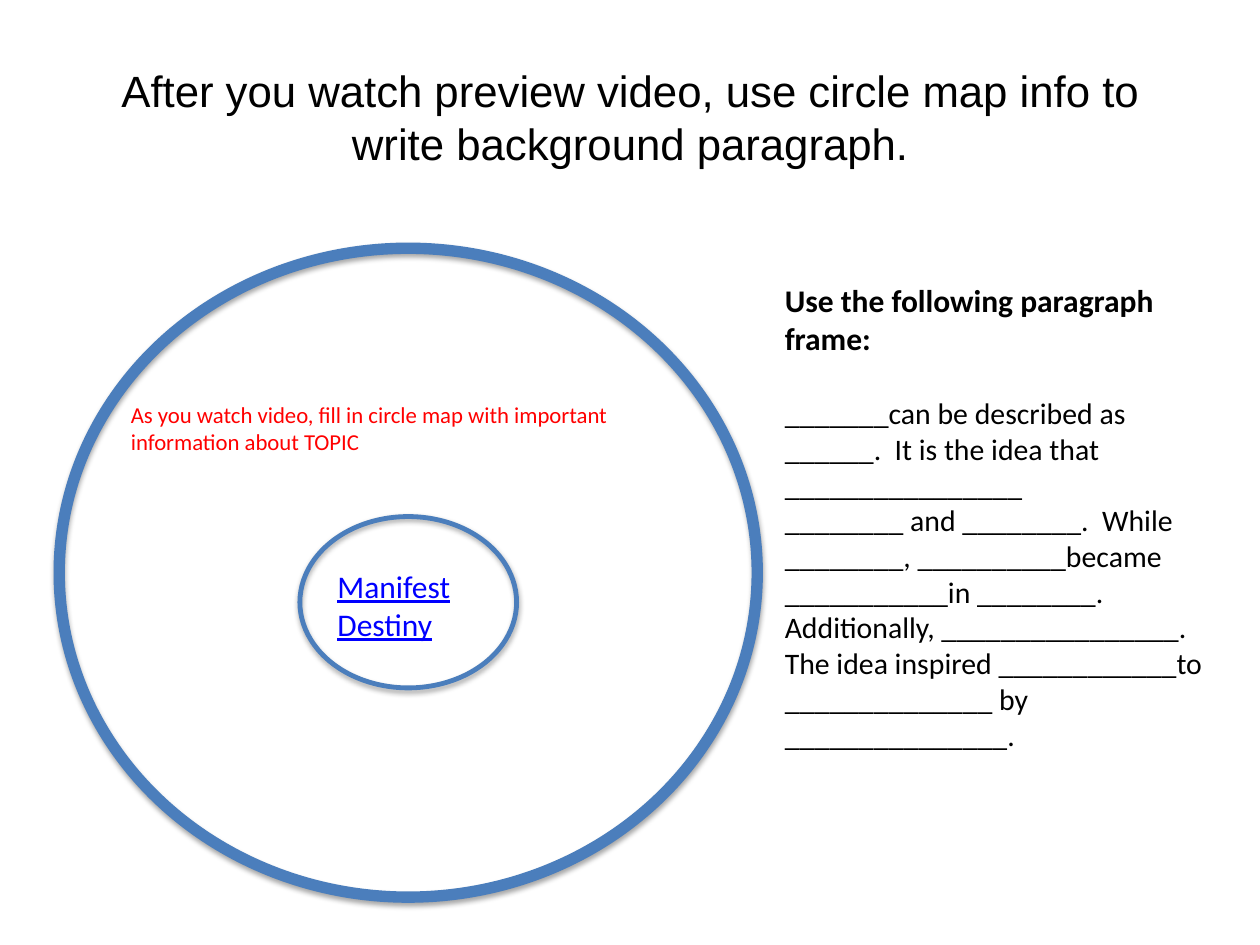
from lxml import etree
from pptx import Presentation
from pptx.dml.color import RGBColor
from pptx.enum.shapes import MSO_SHAPE
from pptx.enum.text import MSO_ANCHOR, MSO_AUTO_SIZE, PP_ALIGN
from pptx.oxml.ns import qn
from pptx.util import Inches, Pt

OVAL = MSO_SHAPE.OVAL
MIDDLE = MSO_ANCHOR.MIDDLE
LEFT, CENTER = PP_ALIGN.LEFT, PP_ALIGN.CENTER
NO_FIT = MSO_AUTO_SIZE.NONE


def color(hex_code):
    return RGBColor.from_string(hex_code)


def write(paragraph, text, size=18, font="Calibri", ink="000000", bold=False,
          underline=False, align=LEFT, after=0):
    paragraph.alignment = align
    paragraph.space_after = Pt(after)
    run = paragraph.add_run()
    run.text = text
    run.font.name, run.font.size = font, Pt(size)
    run.font.bold, run.font.underline = bold, underline
    run.font.color.rgb = color(ink)


class CircleMapSlide:
    ring_color = "4B7EBC"

    def __init__(self, deck):
        self.slide = deck.slides.add_slide(deck.slide_layouts[5])

    def title(self, box, text, **style):
        heading = self.slide.shapes.title
        heading.left, heading.top, heading.width, heading.height = map(Inches, box)
        frame = heading.text_frame
        frame.auto_size, frame.vertical_anchor = NO_FIT, MIDDLE
        write(frame.paragraphs[0], text, align=CENTER, **style)

    def ring(self, box, weight):
        ring = self.slide.shapes.add_shape(OVAL, *map(Inches, box))
        ring.fill.background()
        ring.line.color.rgb = color(self.ring_color)
        ring.line.width = Pt(weight)
        self.soften(ring)

    def soften(self, ring):
        """Give a ring its soft shadow, falling straight down."""
        ring.shadow.inherit = False
        effects = ring._element.spPr.find(qn("a:effectLst"))
        shadow = etree.SubElement(
            effects, qn("a:outerShdw"), blurRad=str(Pt(3.1)),
            dist=str(Pt(1.8)), dir="5400000", rotWithShape="0")
        black = etree.SubElement(shadow, qn("a:srgbClr"), val="000000")
        etree.SubElement(black, qn("a:alpha"), val="35000")

    def text(self, box, *paragraphs):
        frame = self.slide.shapes.add_textbox(*map(Inches, box)).text_frame
        frame.word_wrap = True
        for index, (words, style) in enumerate(paragraphs):
            paragraph = frame.add_paragraph() if index else frame.paragraphs[0]
            write(paragraph, words, **style)


def main():
    deck = Presentation()
    deck.slide_width, deck.slide_height = Inches(10), Inches(7.5)
    page = CircleMapSlide(deck)

    page.title((0.5, 0.3, 9, 1.25),
               "After you watch preview video, use circle map info to "
               "write background paragraph.", size=25, font="Arial")

    # Circle map: outer ring for notes, inner ring for the topic
    page.ring((0.47, 1.97, 5.54, 5.15), 6.5)
    page.ring((2.38, 4.1, 1.72, 1.36), 2.75)
    page.text((2.58, 4.45, 1.53, 0.71),
              ("Manifest Destiny", dict(ink="0000FF", underline=True)))
    page.text((0.94, 3.13, 4.48, 0.54),
              ("As you watch video, fill in circle map with important "
               "information about TOPIC", dict(size=13, ink="FF0000")))

    # Paragraph frame with blanks to fill in
    sentences = [
        "_______can be described as ______.  It is the idea that ________________",
        "________ and ________.  While ________, __________became "
        "___________in ________.",
        "Additionally, ________________.  The idea inspired "
        "____________to ______________ by _______________.",
    ]
    page.text((6.13, 2.18, 3.61, 3.87),
              ("Use the following paragraph frame:", dict(bold=True, after=22)),
              *((sentence, dict(size=17)) for sentence in sentences))

    deck.save("out.pptx")


if __name__ == "__main__":
    main()
